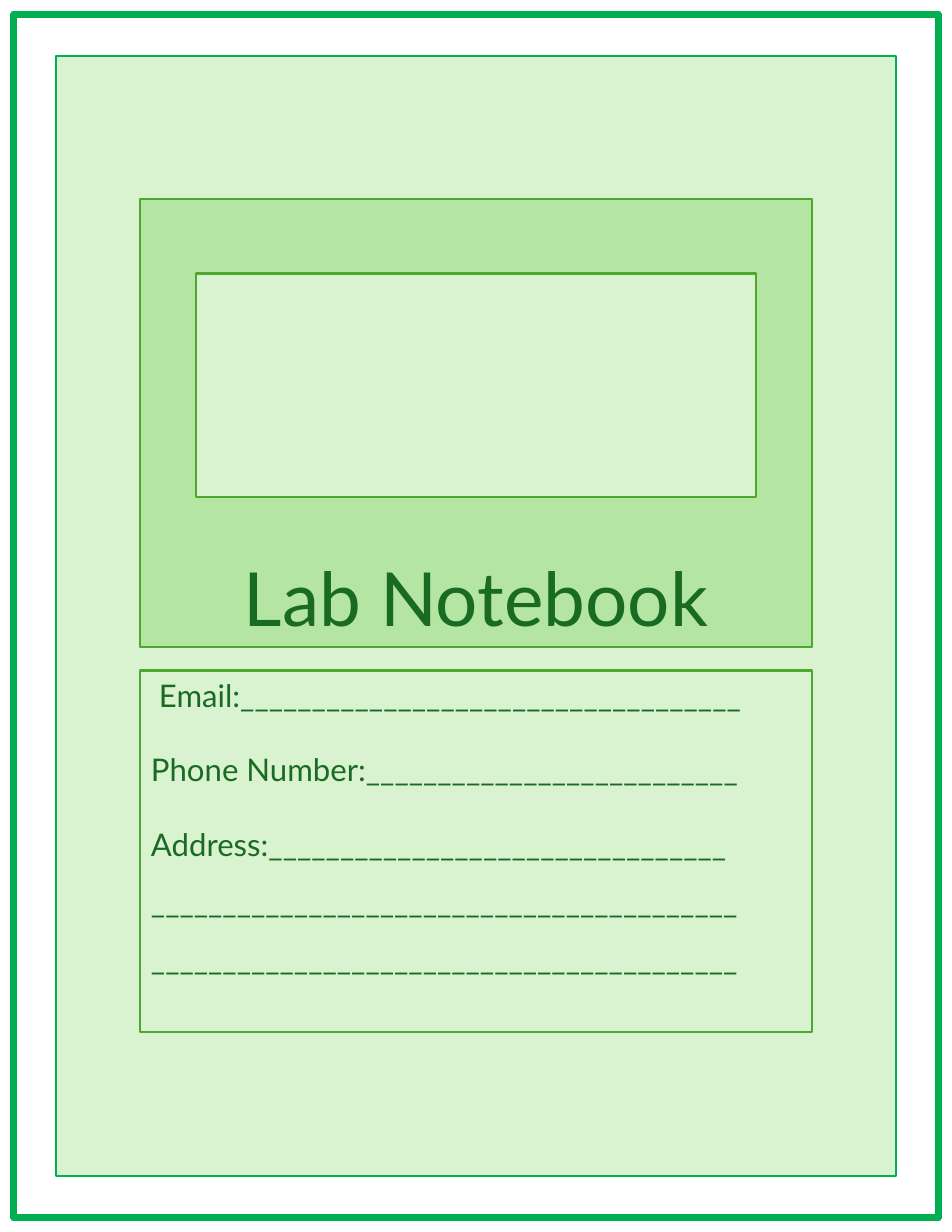
from dataclasses import dataclass
from typing import Optional

from pptx import Presentation
from pptx.dml.color import RGBColor
from pptx.enum.shapes import MSO_SHAPE
from pptx.enum.text import MSO_ANCHOR, PP_ALIGN
from pptx.shapes.autoshape import Shape
from pptx.slide import Slide
from pptx.util import Cm, Pt

PAGE_W, PAGE_H = 21.59, 27.94


@dataclass(frozen=True)
class Theme:
    font: str = "Lato"
    text: str = "196B24"
    border: str = "00B050"
    edge: str = "4EA72E"
    pale: str = "D9F2D0"
    mid: str = "B4E5A2"
    title_size: float = 48
    field_size: float = 20
    frame_line: float = 4.5
    thin_line: float = 1.5


@dataclass(frozen=True)
class Panel:
    """A rectangle centred across the page; lengths in cm."""
    top: float
    width: float
    height: float
    line: str
    line_width: float
    fill: Optional[str] = None


@dataclass(frozen=True)
class Field:
    label: str
    blanks: int
    space_before: float


THEME = Theme()

FRAME = Panel(0.32, 20.96, 27.3, THEME.border, THEME.frame_line)
PAGE = Panel(1.27, 19.05, 25.4, THEME.border, THEME.thin_line, THEME.pale)
COVER = Panel(4.52, 15.24, 10.16, THEME.edge, THEME.thin_line, THEME.mid)
WINDOW = Panel(6.2, 12.7, 5.08, THEME.edge, THEME.thin_line, THEME.pale)
CONTACT = Panel(15.21, 15.24, 8.2, THEME.edge, THEME.thin_line, THEME.pale)

FIELDS = [
    Field(" Email:", 35, 0),
    Field("Phone Number:", 26, 24),
    Field("Address:", 32, 24),
    Field("", 41, 12.6),
    Field("", 41, 12.6),
]


def add_panel(s: Slide, panel: Panel) -> Shape:
    sp = s.shapes.add_shape(
        MSO_SHAPE.RECTANGLE, Cm((PAGE_W - panel.width) / 2), Cm(panel.top),
        Cm(panel.width), Cm(panel.height))
    sp.shadow.inherit = False
    if panel.fill:
        sp.fill.solid()
        sp.fill.fore_color.rgb = RGBColor.from_string(panel.fill)
    else:
        sp.fill.background()
    sp.line.color.rgb = RGBColor.from_string(panel.line)
    sp.line.width = Pt(panel.line_width)
    return sp


def write_lines(sp: Shape, lines: list[str], size: float,
                align: PP_ALIGN, anchor: MSO_ANCHOR) -> None:
    tf = sp.text_frame
    tf.word_wrap = True
    tf.vertical_anchor = anchor
    tf.text = "\n".join(lines)
    for p in tf.paragraphs:
        p.alignment = align
        p.font.name = THEME.font
        p.font.size = Pt(size)
        p.font.color.rgb = RGBColor.from_string(THEME.text)


def add_contact(s: Slide) -> None:
    sp = add_panel(s, CONTACT)
    write_lines(sp, [f.label + "_" * f.blanks for f in FIELDS],
                THEME.field_size, PP_ALIGN.LEFT, MSO_ANCHOR.TOP)
    for p, field in zip(sp.text_frame.paragraphs, FIELDS):
        p.space_before = Pt(field.space_before)


def main() -> None:
    prs = Presentation()
    prs.slide_width, prs.slide_height = Cm(PAGE_W), Cm(PAGE_H)
    s = prs.slides.add_slide(prs.slide_layouts[6])

    add_panel(s, FRAME)
    add_panel(s, PAGE)
    cover = add_panel(s, COVER)
    write_lines(cover, ["Lab Notebook"], THEME.title_size,
                PP_ALIGN.CENTER, MSO_ANCHOR.BOTTOM)
    add_panel(s, WINDOW)
    add_contact(s)

    prs.save("out.pptx")


if __name__ == "__main__":
    main()
